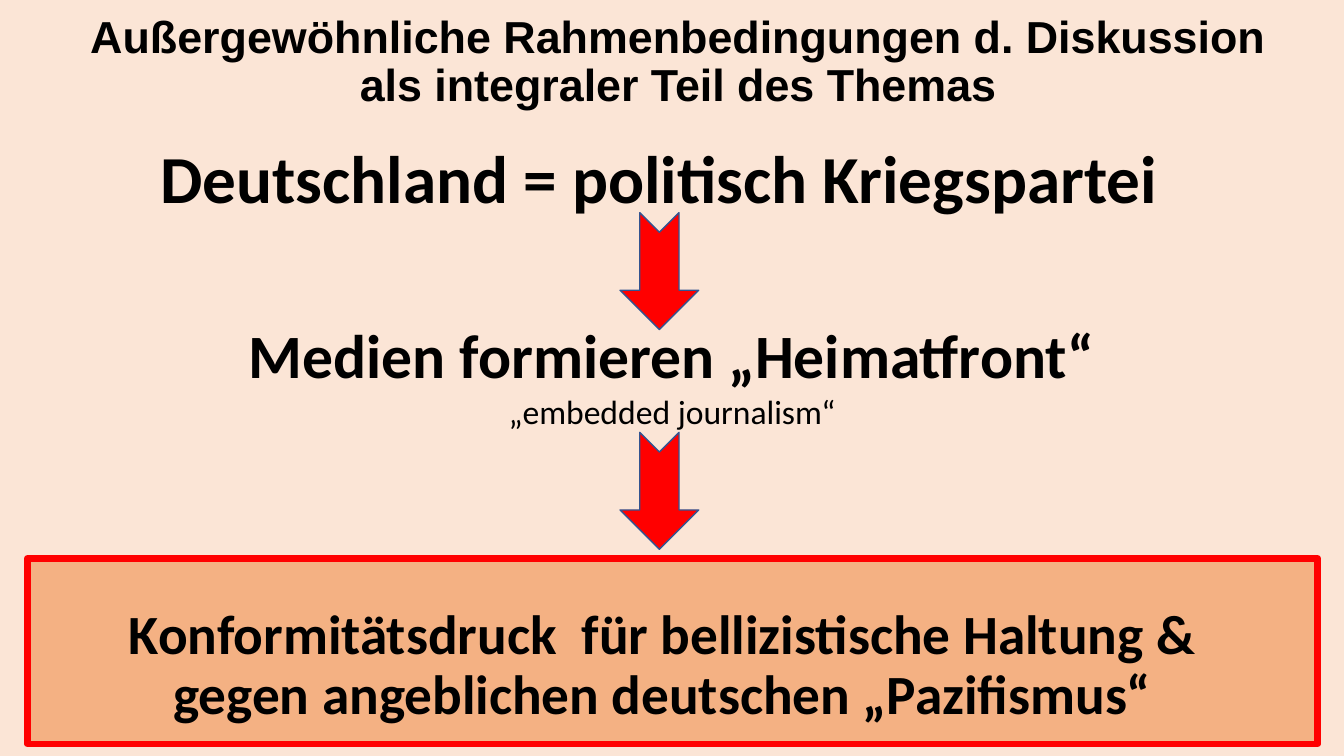
from pptx import Presentation
from pptx.dml.color import RGBColor
from pptx.enum.shapes import MSO_SHAPE
from pptx.enum.text import MSO_ANCHOR, PP_ALIGN
from pptx.util import Inches, Pt

SLIDE_WIDTH = Inches(13.33)
SLIDE_HEIGHT = Inches(7.5)

BACKGROUND = RGBColor(0xFB, 0xE5, 0xD6)
BOX_FILL = RGBColor(0xF4, 0xB1, 0x83)
RED = RGBColor(0xFF, 0x00, 0x00)
ARROW_LINE = RGBColor(0x32, 0x54, 0x91)
BLACK = RGBColor(0x00, 0x00, 0x00)


def place(left, top, width, height):
    """Turn percentages of the slide into lengths."""
    return (int(SLIDE_WIDTH * left / 100), int(SLIDE_HEIGHT * top / 100),
            int(SLIDE_WIDTH * width / 100), int(SLIDE_HEIGHT * height / 100))


def write_lines(shape, text, size, font="Calibri", spacing=1.0):
    """Fill a shape with centred bold lines."""
    text_frame = shape.text_frame
    text_frame.word_wrap = True
    text_frame.text = text
    for paragraph in text_frame.paragraphs:
        paragraph.alignment = PP_ALIGN.CENTER
        paragraph.line_spacing = spacing
        for run in paragraph.runs:
            run.font.name = font
            run.font.size = Pt(size)
            run.font.bold = True
            run.font.color.rgb = BLACK
    return text_frame


def add_text(slide, area, text, size, **style):
    text_box = slide.shapes.add_textbox(*place(*area))
    return write_lines(text_box, text, size, **style)


def add_filled_shape(slide, kind, area, fill, line, line_width):
    shape = slide.shapes.add_shape(kind, *place(*area))
    shape.shadow.inherit = False
    shape.fill.solid()
    shape.fill.fore_color.rgb = fill
    shape.line.color.rgb = line
    shape.line.width = Pt(line_width)
    return shape


def add_down_arrow(slide, top):
    arrow = add_filled_shape(slide, MSO_SHAPE.NOTCHED_RIGHT_ARROW,
                             (44.71, top, 8.7, 10.4), RED, ARROW_LINE, 1)
    arrow.rotation = 90


def add_conclusion(slide, text):
    box = add_filled_shape(slide, MSO_SHAPE.RECTANGLE,
                           (2.03, 73.87, 96.02, 24.53), BOX_FILL, RED, 4.75)
    text_frame = write_lines(box, text, 39.5, spacing=0.7)
    text_frame.vertical_anchor = MSO_ANCHOR.TOP
    text_frame.margin_top = Inches(0.58)
    text_frame.margin_right = Inches(0.3)
    text_frame.paragraphs[1].space_before = Pt(10)


def main():
    presentation = Presentation()
    presentation.slide_width = SLIDE_WIDTH
    presentation.slide_height = SLIDE_HEIGHT
    slide = presentation.slides.add_slide(presentation.slide_layouts[6])
    slide.background.fill.solid()
    slide.background.fill.fore_color.rgb = BACKGROUND

    # Title
    title = add_text(slide, (0.98, -1.33, 99.02, 19.33),
                     "Außergewöhnliche Rahmenbedingungen d. Diskussion\n"
                     "als integraler Teil des Themas",
                     32, font="Arial", spacing=0.9)
    title.vertical_anchor = MSO_ANCHOR.MIDDLE

    # Conclusion at the foot of the chain
    add_conclusion(slide, "Konformitätsdruck  für bellizistische Haltung &\n"
                          "gegen angeblichen deutschen „Pazifismus“")

    # Statements
    add_text(slide, (9.08, 17.33, 79.97, 12.13),
             "Deutschland = politisch Kriegspartei", 48)
    media = add_text(slide, (8.33, 41.33, 83.35, 16.67),
                     "Medien formieren „Heimatfront“\n„embedded journalism“", 44)
    subtitle_font = media.paragraphs[1].runs[0].font
    subtitle_font.size = Pt(24)
    subtitle_font.bold = False

    # Arrows between the statements
    for top in (30.67, 59.73):
        add_down_arrow(slide, top)

    presentation.save("out.pptx")


if __name__ == "__main__":
    main()
